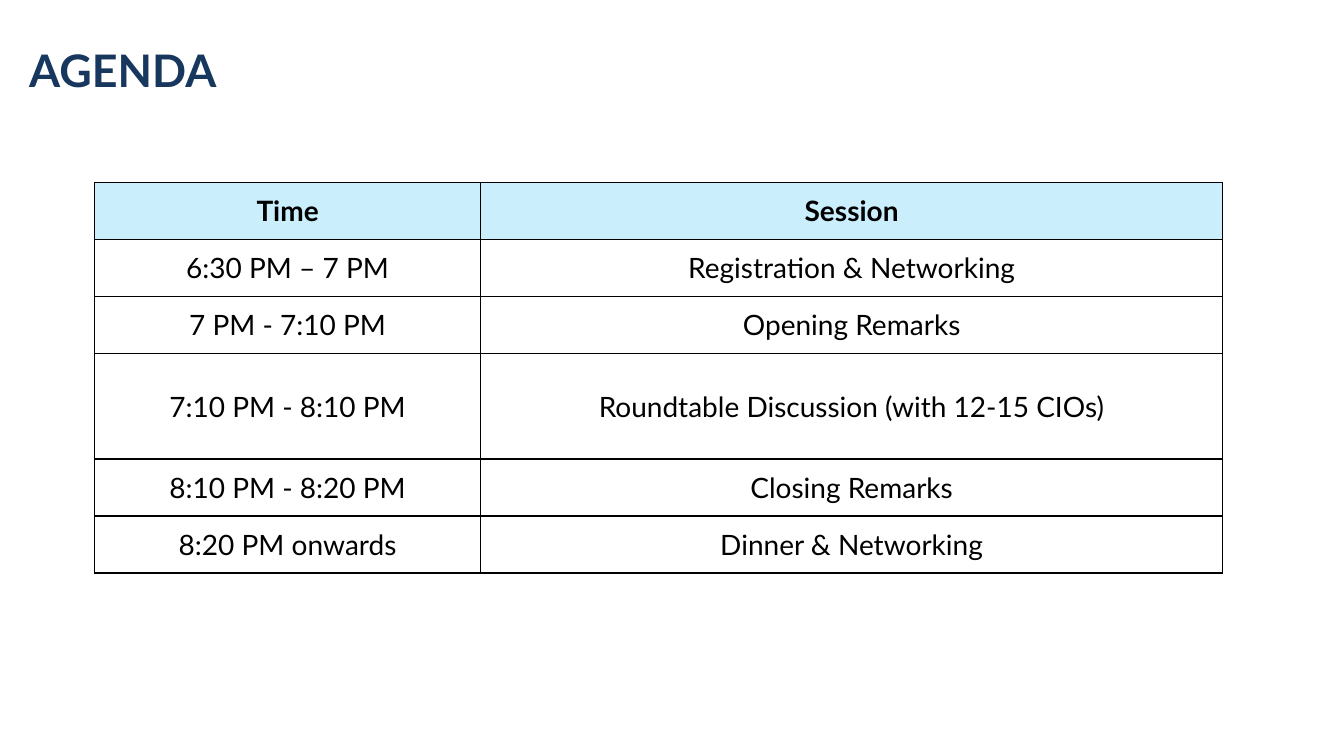
from lxml.etree import SubElement
from pptx import Presentation
from pptx.dml.color import RGBColor
from pptx.enum.text import MSO_ANCHOR as Anchor, PP_ALIGN as Align
from pptx.oxml.ns import qn
from pptx.util import Pt

NAVY, BLACK, PALE_BLUE = "17375E", "000000", "CAEEFB"
SESSIONS = [
    ("Time", "Session"),
    ("6:30 PM – 7 PM", "Registration & Networking"),
    ("7 PM - 7:10 PM", "Opening Remarks"),
    ("7:10 PM - 8:10 PM", "Roundtable Discussion (with 12-15 CIOs)"),
    ("8:10 PM - 8:20 PM", "Closing Remarks"),
    ("8:20 PM onwards", "Dinner & Networking"),
]
COLUMN_WIDTHS = [275.8, 529.9]
ROW_HEIGHT, ROUNDTABLE_HEIGHT = 40.7, 75.6


def color(code):
    return RGBColor.from_string(code)


def write(para, text, size=20, ink=BLACK, bold=False, align=Align.LEFT):
    para.alignment = align
    span = para.add_run()
    span.text = text
    span.font.name = "Lato"
    span.font.size = Pt(size)
    span.font.bold = bold
    span.font.color.rgb = color(ink)


deck = Presentation()
deck.slide_width, deck.slide_height = Pt(960), Pt(540)
page = deck.slides.add_slide(deck.slide_layouts[6])

title = page.shapes.add_textbox(Pt(20.9), Pt(26.6), Pt(877), Pt(46)).text_frame
title.word_wrap = True
title.vertical_anchor = Anchor.MIDDLE
title.margin_left = 0
write(title.paragraphs[0], "AGENDA", size=32, ink=NAVY, bold=True)

row_heights = [ROUNDTABLE_HEIGHT if "Roundtable" in session else ROW_HEIGHT
               for _, session in SESSIONS]
agenda = page.shapes.add_table(
    len(SESSIONS), len(COLUMN_WIDTHS), Pt(67.6), Pt(130.3),
    Pt(sum(COLUMN_WIDTHS)), Pt(sum(row_heights))).table
agenda.horz_banding = False
for column, width in zip(agenda.columns, COLUMN_WIDTHS):
    column.width = Pt(width)
for row, height in zip(agenda.rows, row_heights):
    row.height = Pt(height)

for row_index, entry in enumerate(SESSIONS):
    is_header = row_index == 0
    for column_index, text in enumerate(entry):
        cell = agenda.cell(row_index, column_index)
        cell.vertical_anchor = Anchor.MIDDLE
        cell.margin_left = cell.margin_right = Pt(5)
        cell.margin_top = cell.margin_bottom = Pt(0.7)
        write(cell.text_frame.paragraphs[0], text, bold=is_header, align=Align.CENTER)

        # Borders must come before the fill in the cell properties
        properties = cell._tc.get_or_add_tcPr()
        for side in ("a:lnL", "a:lnR", "a:lnT", "a:lnB"):
            border = SubElement(properties, qn(side), w=str(Pt(1)))
            SubElement(SubElement(border, qn("a:solidFill")), qn("a:srgbClr"), val=BLACK)
        if is_header:
            cell.fill.solid()
            cell.fill.fore_color.rgb = color(PALE_BLUE)
        else:
            cell.fill.background()

deck.save("out.pptx")
